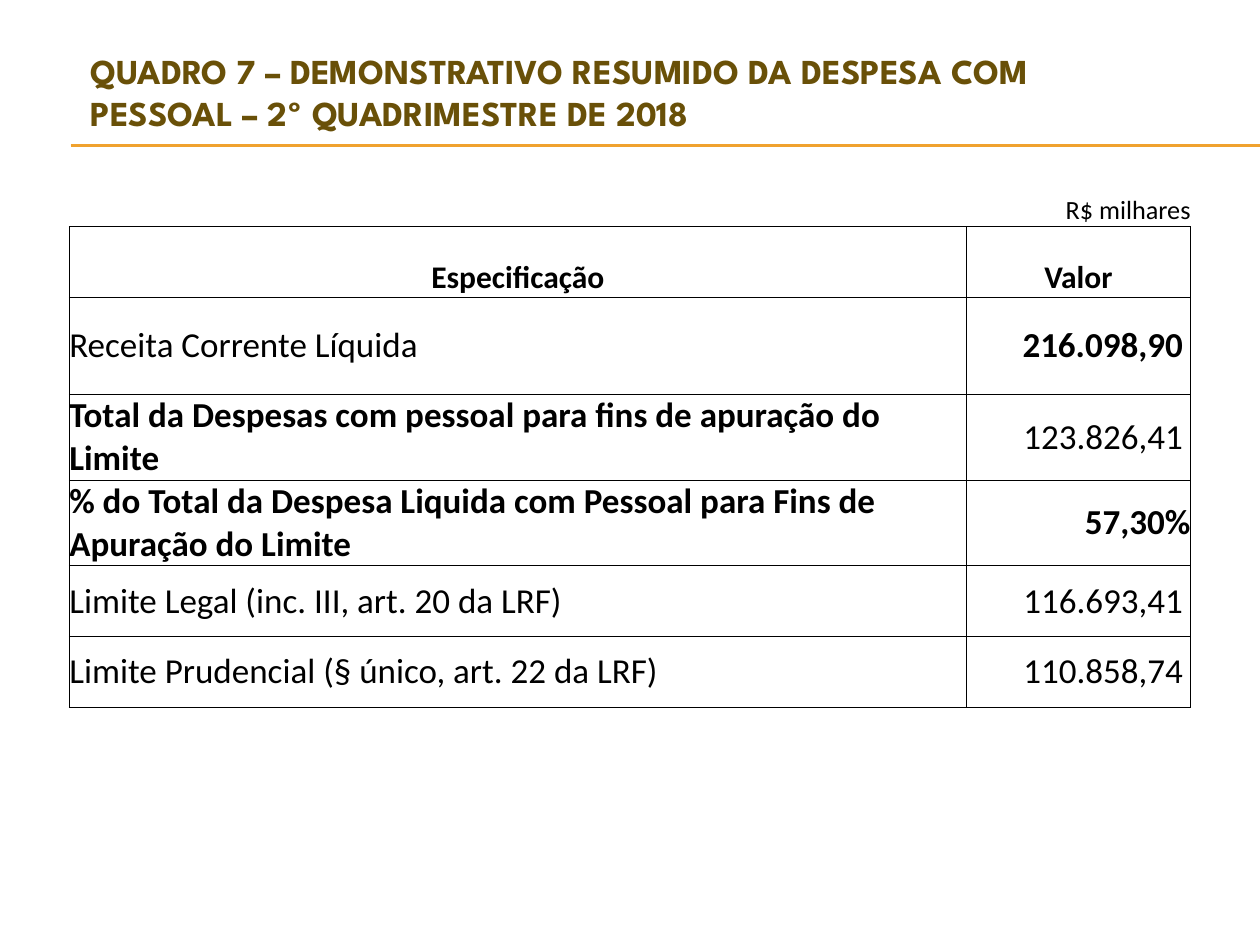
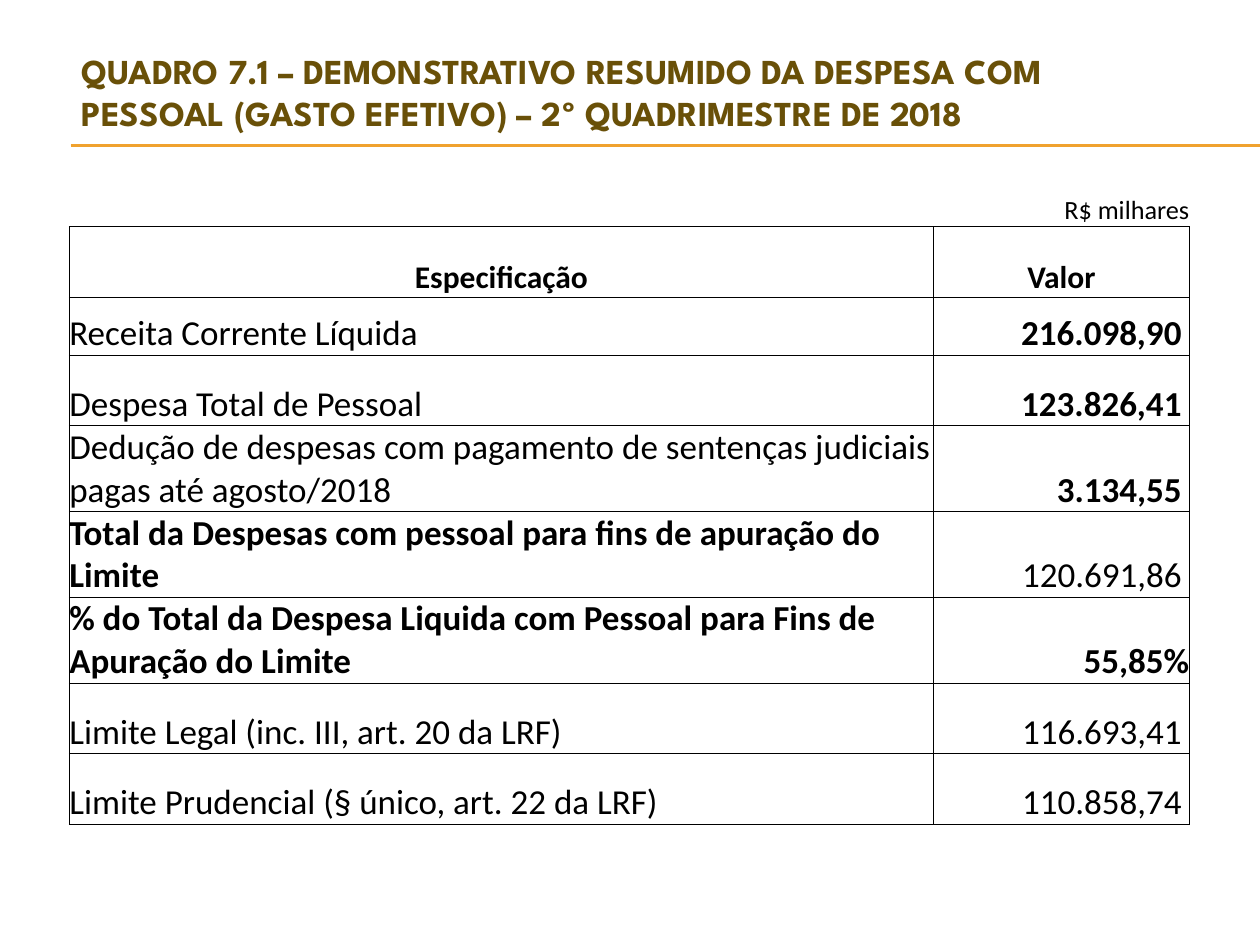
from dataclasses import dataclass
from typing import Any, NamedTuple

from lxml.etree import SubElement
from pptx import Presentation
from pptx.dml.color import RGBColor as Rgb
from pptx.enum.shapes import MSO_CONNECTOR as Conn
from pptx.enum.text import MSO_ANCHOR as Anchor, MSO_AUTO_SIZE as Fit, PP_ALIGN as Align
from pptx.oxml import parse_xml
from pptx.oxml.ns import nsdecls, qn
from pptx.util import Inches, Pt


@dataclass(frozen=True)
class Theme:
    gold: Rgb = Rgb.from_string("F0A22E")
    brown: Rgb = Rgb.from_string("695008")
    black: Rgb = Rgb.from_string("000000")
    head_font: str = "League Spartan"
    body_font: str = "Calibri"
    title: Pt = Pt(20)
    body: Pt = Pt(20)
    head: Pt = Pt(18)
    unit: Pt = Pt(15)
    rule: Pt = Pt(0.75)
    grid: Pt = Pt(0.5)


class Row(NamedTuple):
    label: str
    value: str
    height: float = 0.56
    strong_label: bool = False
    strong_value: bool = False


class Board(NamedTuple):
    title: str
    left: float
    cols: tuple[float, ...]
    anchor: Any
    rows: tuple[Row, ...]


THEME = Theme()
LEFT, TOP = 0.55, 1.25
UNIT_ROW, HEAD_ROW, TALL_ROW = 0.55, 0.56, 0.68
VALUE_GAP = 0.06

TOTAL = "Total da Despesas com pessoal para fins de apuração do Limite"
SHARE = "% do Total da Despesa Liquida com Pessoal para Fins de Apuração do Limite"
INCOME = "Receita Corrente Líquida"
LIMITS = (
    Row("Limite Legal (inc. III, art. 20 da LRF)", "116.693,41"),
    Row("Limite Prudencial (§ único, art. 22 da LRF)", "110.858,74"),
)

BOARDS = (
    Board(
        "QUADRO 7 – DEMONSTRATIVO RESUMIDO DA DESPESA COM PESSOAL – 2º QUADRIMESTRE DE 2018",
        0.62, (2.66, 1.48, 1.48, 1.5, 1.78), Anchor.MIDDLE,
        (
            Row(INCOME, "216.098,90", 0.77, strong_value=True),
            Row(TOTAL, "123.826,41", TALL_ROW, strong_label=True),
            Row(SHARE, "57,30%", TALL_ROW, True, True),
            *LIMITS,
        ),
    ),
    Board(
        "QUADRO 7.1 – DEMONSTRATIVO RESUMIDO DA DESPESA COM PESSOAL (GASTO EFETIVO)"
        " – 2º QUADRIMESTRE DE 2018",
        0.55, (2.66, 1.48, 1.48, 1.24, 2.03), Anchor.BOTTOM,
        (
            Row(INCOME, "216.098,90", 0.46, strong_value=True),
            Row("Despesa Total de Pessoal", "123.826,41", strong_value=True),
            Row("Dedução de despesas com pagamento de sentenças judiciais pagas até agosto/2018",
                "3.134,55", TALL_ROW, strong_value=True),
            Row(TOTAL, "120.691,86", TALL_ROW, strong_label=True),
            Row(SHARE, "55,85%", TALL_ROW, True, True),
            *LIMITS,
        ),
    ),
)


def assign(target: Any, values: dict[str, Any]) -> None:
    for name, value in values.items():
        setattr(target, name, value)


def style(frame: Any, align: Any, color: Rgb, **font: Any) -> None:
    para = frame.paragraphs[0]
    para.alignment = align
    assign(para.font, font)
    para.font.color.rgb = color


def add_title(slide: Any, board: Board) -> None:
    title = slide.shapes.title
    assign(title, dict(left=Inches(board.left), top=Inches(0.39),
                       width=Inches(8.5), height=Inches(0.67)))
    frame = title.text_frame
    frame.text = board.title
    assign(frame, dict(word_wrap=True, auto_size=Fit.NONE, vertical_anchor=Anchor.MIDDLE))
    style(frame, Align.LEFT, THEME.brown, name=THEME.head_font, size=THEME.title, bold=True)


def add_rules(slide: Any) -> None:
    """Draw the double line below the title."""
    for y in (1.15, 1.16):
        rule = slide.shapes.add_connector(
            Conn.STRAIGHT, Inches(0.56), Inches(y), Inches(10), Inches(y))
        rule.line.color.rgb = THEME.gold
        rule.line.width = THEME.rule
        SubElement(rule._element.spPr, qn("a:effectLst"))


def set_edges(cell: Any, shown: str) -> None:
    """Rule the sides named in shown and clear the others."""
    props = cell._tc.get_or_add_tcPr()
    for spot, side in enumerate("LRTB"):
        paint = (f'<a:solidFill><a:srgbClr val="{THEME.black}"/></a:solidFill>'
                 if side in shown else "<a:noFill/>")
        props.insert(spot, parse_xml(
            f'<a:ln{side} {nsdecls("a")} w="{int(THEME.grid)}">{paint}</a:ln{side}>'))


def fill_cell(cell: Any, text: str, align: Any, anchor: Any, size: Pt,
              bold: bool = False, gap: float = 0) -> None:
    cell.text = text
    assign(cell, dict(vertical_anchor=anchor, margin_right=Inches(gap)))
    style(cell.text_frame, align, THEME.black, name=THEME.body_font, size=size, bold=bold)


def add_grid(slide: Any, board: Board) -> None:
    heights = [UNIT_ROW, HEAD_ROW, *(row.height for row in board.rows)]
    last = len(board.cols) - 1
    grid = slide.shapes.add_table(
        len(heights), len(board.cols), Inches(LEFT), Inches(TOP),
        Inches(sum(board.cols)), Inches(sum(heights))).table
    assign(grid, dict(first_row=False, horz_banding=False))
    for col, width in zip(grid.columns, board.cols):
        col.width = Inches(width)
    for line, height in zip(grid.rows, heights):
        line.height = Inches(height)
    for r in range(len(heights)):
        for c in range(last + 1):
            cell = grid.cell(r, c)
            assign(cell, dict(margin_left=0, margin_right=0, margin_top=0, margin_bottom=0))
            cell.fill.background()
            set_edges(cell, "LRTB" if r else "B")
        if r:
            grid.cell(r, 0).merge(grid.cell(r, last - 1))

    fill_cell(grid.cell(0, last), "R$ milhares", Align.RIGHT, Anchor.BOTTOM, THEME.unit)
    for c, text in ((0, "Especificação"), (last, "Valor")):
        fill_cell(grid.cell(1, c), text, Align.CENTER, Anchor.BOTTOM, THEME.head, True)
    for r, row in enumerate(board.rows, 2):
        gap = 0 if row.value.endswith("%") else VALUE_GAP
        fill_cell(grid.cell(r, 0), row.label, Align.LEFT, board.anchor,
                  THEME.body, row.strong_label)
        fill_cell(grid.cell(r, last), row.value, Align.RIGHT, board.anchor,
                  THEME.body, row.strong_value, gap)


def main() -> None:
    deck = Presentation()
    assign(deck, dict(slide_width=Inches(10), slide_height=Inches(7.5)))
    for board in BOARDS:
        slide = deck.slides.add_slide(deck.slide_layouts[5])
        add_rules(slide)
        add_title(slide, board)
        add_grid(slide, board)
    deck.save("out.pptx")


if __name__ == "__main__":
    main()
